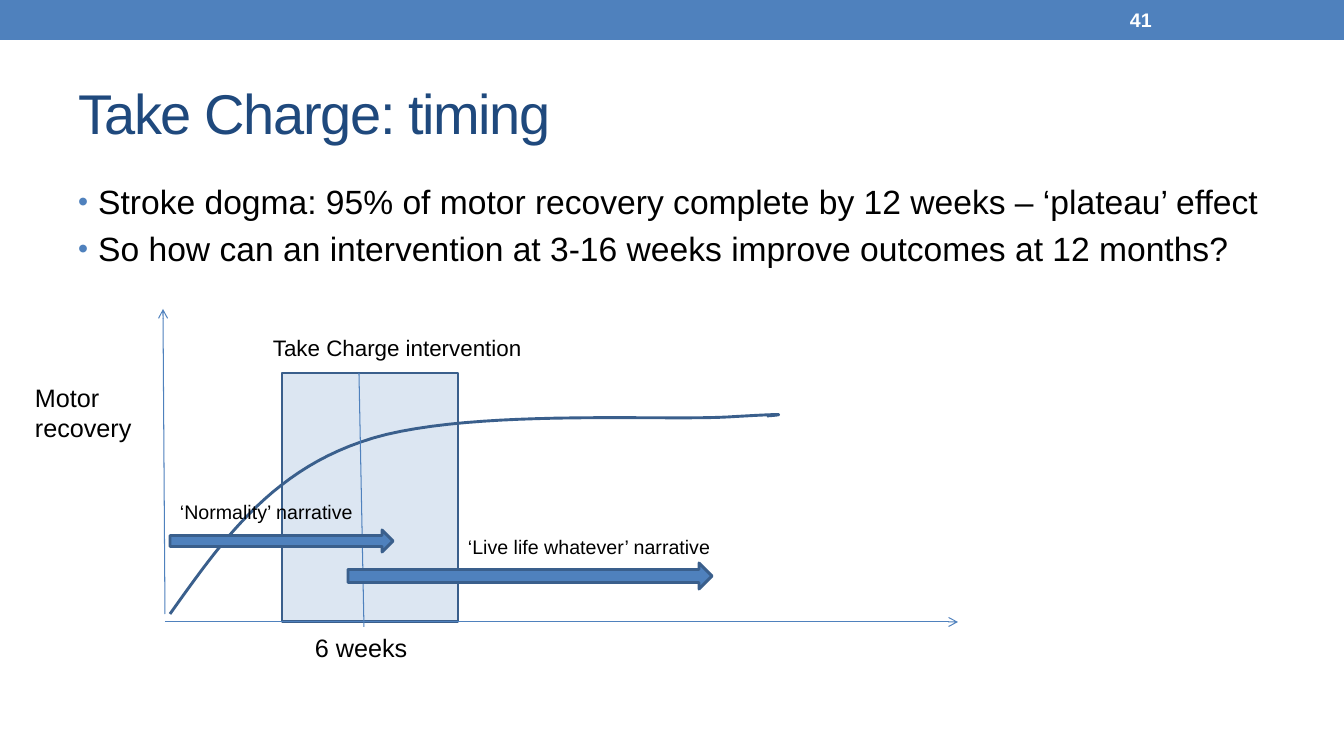
import lxml.etree
import pptx
import pptx.dml.color
import pptx.enum.shapes
import pptx.enum.text
import pptx.oxml
import pptx.oxml.ns
import pptx.util

PX = 9071  # EMU per px
FONT = "Arial"
COLORS = {
    "blue": "4F81BD",
    "outline": "3A5F8C",
    "pale": "DCE6F2",
    "title": "1F497D",
    "black": "000000",
    "white": "FFFFFF",
}
SHAPES = pptx.enum.shapes.MSO_SHAPE
ANCHOR = pptx.enum.text.MSO_ANCHOR
ALIGN = pptx.enum.text.PP_ALIGN

BULLETS = [
    "Stroke dogma: 95% of motor recovery complete by 12 weeks – ‘plateau’ effect",
    "So how can an intervention at 3-16 weeks improve outcomes at 12 months?",
]
# Start point, then two controls and an end point for each Bézier segment
RECOVERY_START = (170, 614)
RECOVERY_SEGMENTS = [
    ((220, 544), (268, 474), (361, 442)),
    ((455, 408), (660, 421), (728, 417)),
    ((795, 413), (781, 415), (767, 416)),
]


def color(name):
    return pptx.dml.color.RGBColor.from_string(COLORS[name])


def emu(*lengths):
    return [pptx.util.Emu(round(length * PX)) for length in lengths]


def set_all(target, values):
    for name, value in values.items():
        setattr(target, name, value)


def add_child(parent, tag, **attributes):
    child = lxml.etree.SubElement(parent, pptx.oxml.ns.qn(tag))
    for name, value in attributes.items():
        child.set(name, value)
    return child


def set_line(shape, name, width):
    shape.line.color.rgb = color(name)
    shape.line.width = pptx.util.Pt(width)


def write(paragraph, text, size, name="black", bold=False):
    run = paragraph.add_run()
    run.text = text
    set_all(run.font, {"name": FONT, "size": pptx.util.Pt(size), "bold": bold})
    run.font.color.rgb = color(name)
    return run


def place(shape, box):
    set_all(shape, dict(zip(("left", "top", "width", "height"), emu(*box))))
    shape.text_frame.auto_size = pptx.enum.text.MSO_AUTO_SIZE.NONE


def add_title(slide, text, box):
    title = slide.shapes.title
    place(title, box)
    title.text_frame.vertical_anchor = ANCHOR.MIDDLE
    paragraph = title.text_frame.paragraphs[0]
    paragraph.alignment = ALIGN.LEFT
    run = write(paragraph, text, 40, "title")
    run.font._element.set("spc", "-100")


def add_bullets(slide, items, box):
    body = slide.placeholders[1]
    place(body, box)
    frame = body.text_frame
    for index, item in enumerate(items):
        paragraph = frame.add_paragraph() if index else frame.paragraphs[0]
        write(paragraph, item, 24)
        properties = paragraph._p.get_or_add_pPr()
        indent = pptx.util.Inches(0.2)
        properties.set("marL", str(indent))
        properties.set("indent", str(-indent))
        add_child(add_child(properties, "a:spcBef"), "a:spcPct", val="20000")
        add_child(add_child(properties, "a:buClr"), "a:srgbClr", val=COLORS["blue"])
        add_child(properties, "a:buSzPct", val="85000")
        add_child(properties, "a:buFont", typeface=FONT)
        add_child(properties, "a:buChar", char="•")


def add_block(slide, kind, box, fill, outline=None):
    block = slide.shapes.add_shape(kind, *emu(*box))
    block.shadow.inherit = False
    block.fill.solid()
    block.fill.fore_color.rgb = color(fill)
    if outline:
        set_line(block, outline, 2.08)
    else:
        block.line.fill.background()


def add_line(slide, start, end, arrow=False):
    connector = slide.shapes.add_connector(
        pptx.enum.shapes.MSO_CONNECTOR.STRAIGHT, *emu(*start, *end))
    set_line(connector, "blue", 0.75)
    if arrow:
        add_child(connector.line._get_or_add_ln(), "a:tailEnd", type="arrow")
    add_child(connector._element.spPr, "a:effectLst")


def bezier_points(start, segments, steps=24):
    for first, second, end in segments:
        for step in range(1, steps + 1):
            t = step / steps
            weights = ((1 - t) ** 3, 3 * t * (1 - t) ** 2, 3 * t * t * (1 - t), t ** 3)
            controls = (start, first, second, end)
            yield tuple(sum(weight * point[axis] for weight, point in zip(weights, controls))
                        for axis in (0, 1))
        start = end


def add_curve(slide, start, segments):
    builder = slide.shapes.build_freeform(*emu(*start))
    points = [emu(*point) for point in bezier_points(start, segments)]
    builder.add_line_segments(points, close=False)
    curve = builder.convert_to_shape()
    curve.shadow.inherit = False
    curve.fill.background()
    set_line(curve, "outline", 2.08)


def add_label(slide, text, box, size, name="black", bold=False, anchor=ANCHOR.TOP):
    label = slide.shapes.add_textbox(*emu(*box))
    set_all(label.text_frame, {"word_wrap": True, "vertical_anchor": anchor})
    write(label.text_frame.paragraphs[0], text, size, name, bold)


def main():
    presentation = pptx.Presentation()
    set_all(presentation, dict(zip(("slide_width", "slide_height"), emu(1344, 756))))
    slide = presentation.slides.add_slide(presentation.slide_layouts[1])

    # Header, title and list
    add_block(slide, SHAPES.RECTANGLE, (0, 0, 1344, 40), "blue")
    add_label(slide, "41", (1120, 2, 157, 36), 14, "white", True, ANCHOR.MIDDLE)
    add_title(slide, "Take Charge: timing", (68, 58, 1210, 109))
    add_bullets(slide, BULLETS, (68, 176, 1210, 537))

    # Intervention window, axes and recovery curve
    add_block(slide, SHAPES.RECTANGLE, (282, 373, 176, 249), "pale", "outline")
    add_line(slide, (165, 614), (163, 309), arrow=True)
    add_line(slide, (165, 622), (958, 622), arrow=True)
    add_curve(slide, RECOVERY_START, RECOVERY_SEGMENTS)
    add_line(slide, (359, 373), (364, 627))

    # Narrative arrows
    for box in ((170, 530, 223, 22), (348, 563, 364, 26)):
        add_block(slide, SHAPES.RIGHT_ARROW, box, "blue", "outline")

    # Labels
    for text, box, size in (
        ("6 weeks", (305, 627, 118, 40), 18),
        ("Motor recovery", (25, 377, 124, 72), 18),
        ("‘Normality’ narrative", (170, 495, 204, 34), 14),
        ("‘Live life whatever’ narrative", (458, 530, 310, 34), 14),
        ("Take Charge intervention", (263, 329, 270, 37), 16),
    ):
        add_label(slide, text, box, size)

    presentation.save("out.pptx")


if __name__ == "__main__":
    main()
